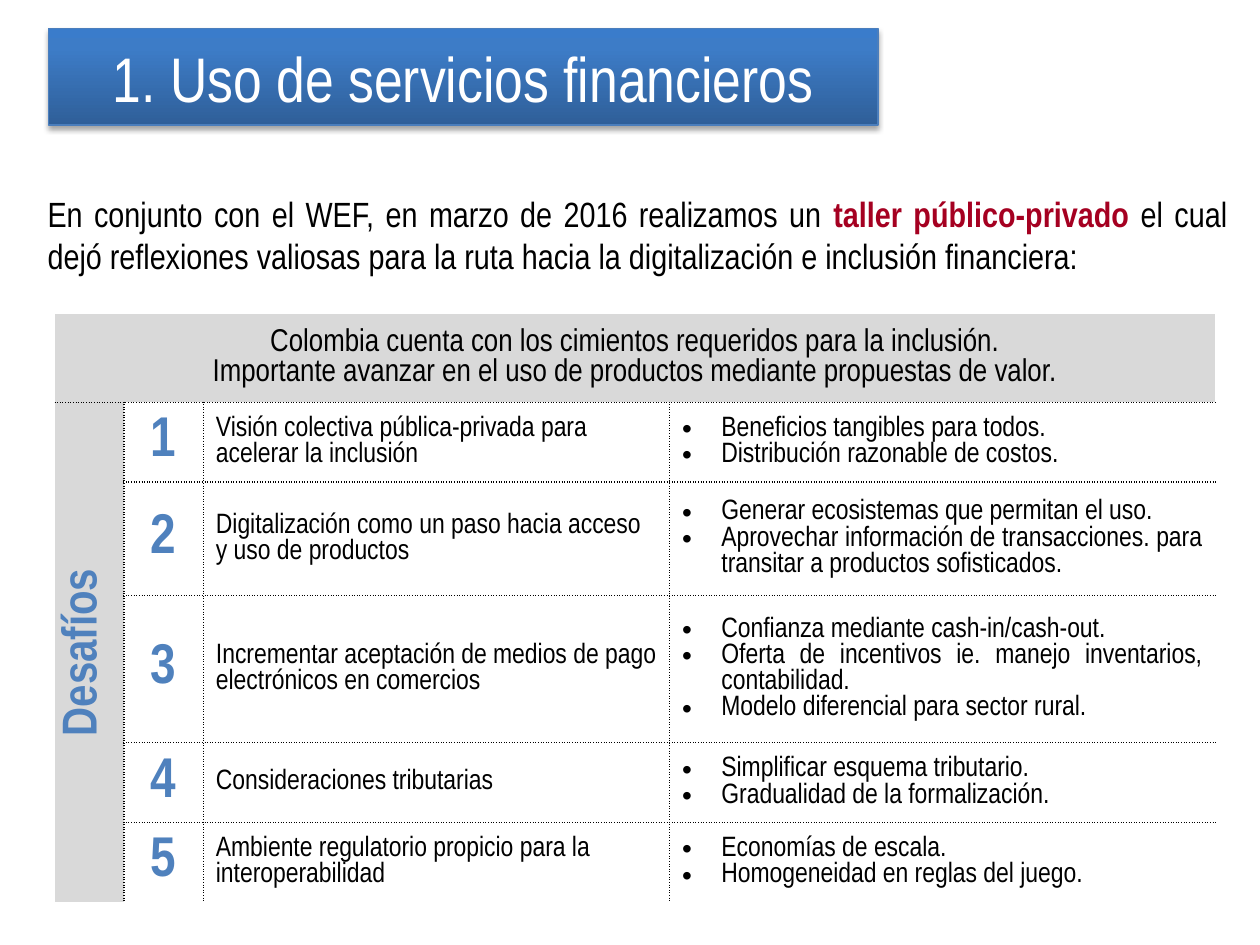
"""Build the slide on the use of financial services."""
import pptx
import pptx.dml.color
import pptx.enum.shapes
import pptx.enum.text
import pptx.oxml
import pptx.oxml.ns
import pptx.util

Cm = pptx.util.Cm
Pt = pptx.util.Pt
ALIGN = pptx.enum.text.PP_ALIGN
MIDDLE = pptx.enum.text.MSO_ANCHOR.MIDDLE
FACE = "Arial Narrow"
HUES = {"black": "000000", "white": "FFFFFF", "blue": "4F81BD", "red": "A50021",
        "gray": "D9D9D9", "edge": "4B7EBC", "deep": "2F5F99", "mid": "3D7CC7",
        "light": "3A7CCB"}
PLAIN = "{2D5ABB26-0587-4C30-8999-92F81FD0307C}"
COLS = [1.4, 1.6, 9.4, 11]
ROWS = [1.77, 1.61, 2.29, 2.96, 1.6, 1.61]
HEAD = ["Colombia cuenta con los cimientos requeridos para la inclusión.",
        "Importante avanzar en el uso de productos mediante propuestas de valor."]
GOALS = [
    ("Visión colectiva pública-privada para acelerar la inclusión",
     ["Beneficios tangibles para todos.", "Distribución razonable de costos."]),
    ("Digitalización como un paso hacia acceso y uso de productos",
     ["Generar ecosistemas que permitan el uso.",
      "Aprovechar información de transacciones. para transitar a productos sofisticados."]),
    ("Incrementar aceptación de medios de pago electrónicos en comercios",
     ["Confianza mediante cash-in/cash-out.",
      "Oferta de incentivos ie. manejo inventarios, contabilidad.",
      "Modelo diferencial para sector rural."]),
    ("Consideraciones tributarias",
     ["Simplificar esquema tributario.", "Gradualidad de la formalización."]),
    ("Ambiente regulatorio propicio para la interoperabilidad",
     ["Economías de escala.", "Homogeneidad en reglas del juego."]),
]


def node(text):
    """Return an XML element of the drawing namespace."""
    spot = text.index(" ") if " " in text.split(">")[0] else text.index(">")
    return pptx.oxml.parse_xml(
        text[:spot] + " " + pptx.oxml.ns.nsdecls("a") + text[spot:])


def tint(hue):
    """Return a named colour."""
    return pptx.dml.color.RGBColor.from_string(HUES[hue])


def style(font, size, hue="black", bold=False):
    """Set face, size, colour and weight."""
    font.name, font.size, font.bold = FACE, Pt(size), bold
    font.color.rgb = tint(hue)


def write(frame, lines, size, align, hue="black", bold=False, dots=False):
    """Fill a text frame with one paragraph per line."""
    for i, line in enumerate(lines):
        para = frame.add_paragraph() if i else frame.paragraphs[0]
        para.text, para.alignment = line, align
        if dots:
            props = para._p.get_or_add_pPr()
            props.set("marL", str(Cm(0.79)))
            props.set("indent", str(Cm(-0.79)))
            props.append(node('<a:buFont typeface="Arial"/>'))
            props.append(node('<a:buChar char="•"/>'))
        style(para.font, size, hue, bold)


def banner(slide):
    """Add the title bar with its gradient and shadow."""
    bar = slide.shapes.add_shape(pptx.enum.shapes.MSO_SHAPE.RECTANGLE,
                                 Cm(0.98), Cm(0.58), Cm(16.72), Cm(1.94))
    bar.line.color.rgb, bar.line.width = tint("edge"), Pt(0.75)
    stops = "".join(
        f'<a:gs pos="{pos}000"><a:srgbClr val="{HUES[hue]}"/></a:gs>'
        for pos, hue in [(0, "deep"), (80, "mid"), (100, "light")])
    props = bar._element.spPr
    props.insert(2, node(f'<a:gradFill rotWithShape="1"><a:gsLst>{stops}</a:gsLst>'
                         '<a:lin ang="16200000" scaled="0"/></a:gradFill>'))
    props.append(node(
        f'<a:effectLst><a:outerShdw blurRad="{Pt(3.1)}" dist="{Pt(1.8)}" '
        f'dir="5400000" rotWithShape="0"><a:srgbClr val="{HUES["black"]}">'
        '<a:alpha val="35000"/></a:srgbClr></a:outerShdw></a:effectLst>'))
    bar.text_frame.word_wrap = True
    bar.text_frame.vertical_anchor = MIDDLE
    write(bar.text_frame, ["1. Uso de servicios financieros"], 36, ALIGN.CENTER, "white")


def intro(slide):
    """Add the opening sentence with its bold phrase."""
    box = slide.shapes.add_textbox(Cm(0.71), Cm(3.76), Cm(24.28), Cm(1.96))
    box.text_frame.word_wrap = True
    para = box.text_frame.paragraphs[0]
    para.alignment = ALIGN.JUSTIFY
    for text, hue in [
            ("En conjunto con el WEF, en marzo de 2016 realizamos un ", "black"),
            ("taller público-privado ", "red"),
            ("el cual dejó reflexiones valiosas para la ruta hacia la "
             "digitalización e inclusión financiera:", "black")]:
        run = para.add_run()
        run.text = text
        style(run.font, 20, hue, hue == "red")


def edge(cell, sides):
    """Draw dotted borders on the given sides, in the order L, R, T, B."""
    props = cell._tc.get_or_add_tcPr()
    for i, side in enumerate(sides):
        props.insert(i, node(
            f'<a:ln{side} w="{Pt(1)}"><a:solidFill><a:srgbClr val="{HUES["black"]}"/>'
            f'</a:solidFill><a:prstDash val="sysDot"/></a:ln{side}>'))


def paint(cell, hue=None):
    """Centre a cell vertically and set its fill."""
    cell.vertical_anchor = MIDDLE
    if hue:
        cell.fill.solid()
        cell.fill.fore_color.rgb = tint(hue)
    else:
        cell.fill.background()


def grid(slide):
    """Add the table of challenges."""
    frame = slide.shapes.add_table(len(ROWS), len(COLS), Cm(1.1), Cm(6.33),
                                   Cm(sum(COLS)), Cm(sum(ROWS)))
    table = frame.table
    table.first_row = table.horz_banding = False
    table._tbl.tblPr.find(pptx.oxml.ns.qn("a:tableStyleId")).text = PLAIN
    for col, width in zip(table.columns, COLS):
        col.width = Cm(width)
    for row, height in zip(table.rows, ROWS):
        row.height = Cm(height)

    head, side = table.cell(0, 0), table.cell(1, 0)
    head.merge(table.cell(0, len(COLS) - 1))
    side.merge(table.cell(len(ROWS) - 1, 0))
    paint(head, "gray")
    paint(side, "gray")
    edge(head, "B")
    edge(side, "RT")
    side._tc.get_or_add_tcPr().set("vert", "vert270")
    write(head.text_frame, HEAD, 18, ALIGN.CENTER)
    write(side.text_frame, ["Desafíos"], 28, ALIGN.CENTER, "blue", True)

    for i, (goal, steps) in enumerate(GOALS, 1):
        num, name, list_ = (table.cell(i, j) for j in (1, 2, 3))
        for cell, sides in [(num, "LRT"), (name, "LT"), (list_, "T")]:
            paint(cell)
            edge(cell, sides + ("B" if i < len(GOALS) else ""))
        write(num.text_frame, [str(i)], 32, ALIGN.CENTER, "blue", True)
        write(name.text_frame, [goal], 16, ALIGN.LEFT)
        write(list_.text_frame, steps, 16, ALIGN.JUSTIFY, dots=True)


def main():
    """Build and save the slide."""
    deck = pptx.Presentation()
    deck.slide_width, deck.slide_height = Cm(25.4), Cm(19.05)
    slide = deck.slides.add_slide(deck.slide_layouts[6])
    banner(slide)
    intro(slide)
    grid(slide)
    deck.save("out.pptx")


if __name__ == "__main__":
    main()
